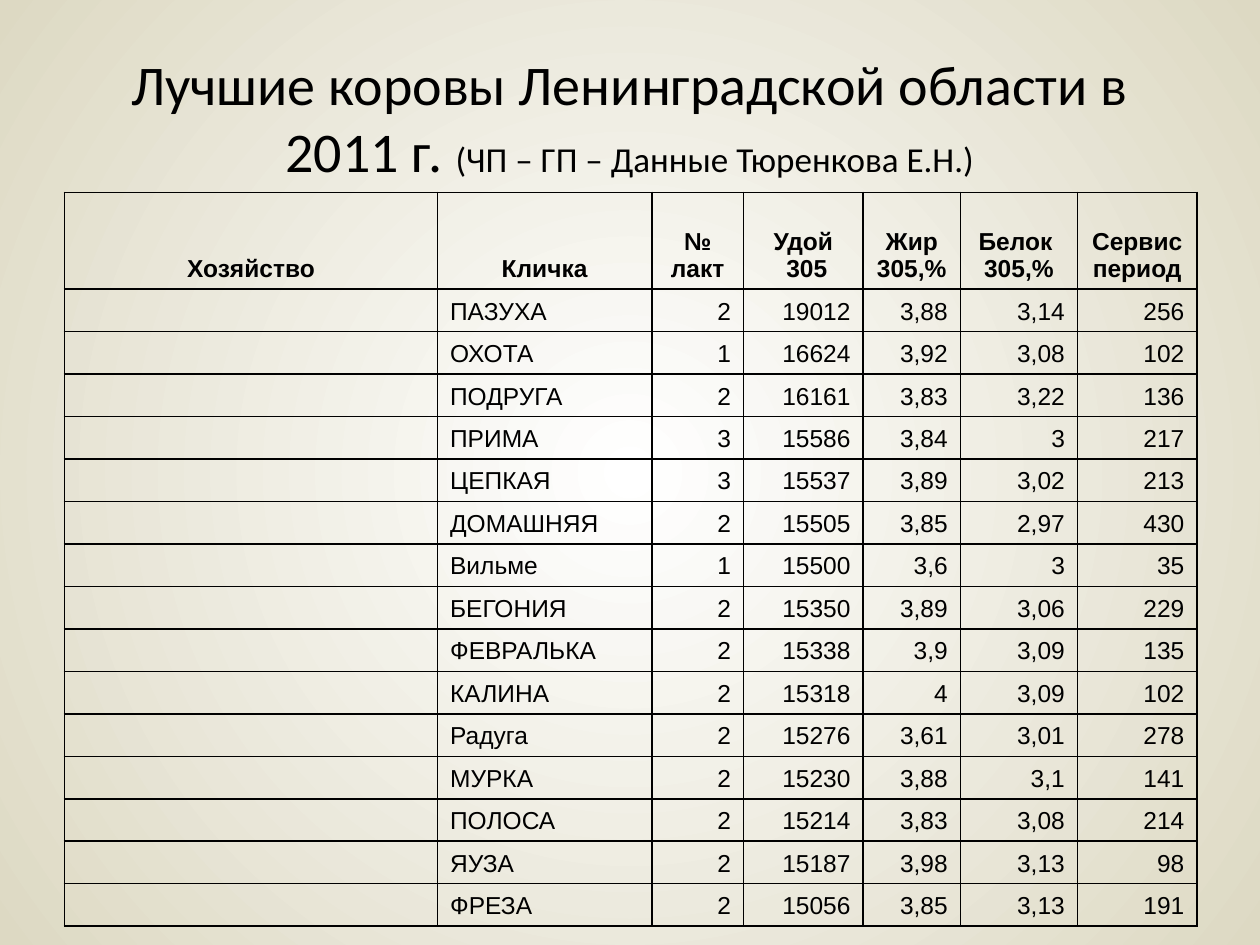
from dataclasses import dataclass

from lxml import etree
from pptx import Presentation
from pptx import util as u
from pptx.dml.color import RGBColor
from pptx.enum import text
from pptx.oxml import ns


@dataclass(frozen=True)
class Theme:
    ink: str = "000000"
    centre: str = "FFFFFF"
    edge: str = "DDD9C3"
    title_font: str = "Calibri"
    table_font: str = "Arial"
    title_size: int = 32
    source_size: int = 20
    table_size: int = 14
    border_width: int = 1


TITLE = "Лучшие коровы Ленинградской области в 2011 г. "
SOURCE = "(ЧП – ГП – Данные Тюренкова Е.Н.)"
HEADERS = ["Хозяйство", "Кличка", "№\nлакт", "Удой\n 305", "Жир\n305,%",
           "Белок \n305,%", "Сервис\nпериод"]
COWS = [
    ("ПАЗУХА", "2", "19012", "3,88", "3,14", "256"),
    ("ОХОТА", "1", "16624", "3,92", "3,08", "102"),
    ("ПОДРУГА", "2", "16161", "3,83", "3,22", "136"),
    ("ПРИМА", "3", "15586", "3,84", "3", "217"),
    ("ЦЕПКАЯ", "3", "15537", "3,89", "3,02", "213"),
    ("ДОМАШНЯЯ", "2", "15505", "3,85", "2,97", "430"),
    ("Вильме", "1", "15500", "3,6", "3", "35"),
    ("БЕГОНИЯ", "2", "15350", "3,89", "3,06", "229"),
    ("ФЕВРАЛЬКА", "2", "15338", "3,9", "3,09", "135"),
    ("КАЛИНА", "2", "15318", "4", "3,09", "102"),
    ("Радуга", "2", "15276", "3,61", "3,01", "278"),
    ("МУРКА", "2", "15230", "3,88", "3,1", "141"),
    ("ПОЛОСА", "2", "15214", "3,83", "3,08", "214"),
    ("ЯУЗА", "2", "15187", "3,98", "3,13", "98"),
    ("ФРЕЗА", "2", "15056", "3,85", "3,13", "191"),
]
COLUMN_WIDTHS = [7.52, 4.32, 1.85, 2.41, 1.96, 2.36, 2.41]
HEADER_HEIGHT = 1.95
ROW_HEIGHT = 0.81


class SlideBuilder:
    def __init__(self, slide, theme):
        self.slide = slide
        self.theme = theme

    def background(self):
        fill = self.slide.background.fill
        fill.gradient()
        for stop, color in zip(fill.gradient_stops, (self.theme.centre, self.theme.edge)):
            stop.color.rgb = RGBColor.from_string(color)
        gradient = self.slide.element.find(".//" + ns.qn("a:gradFill"))
        gradient.remove(gradient.find(ns.qn("a:lin")))
        circle = etree.SubElement(gradient, ns.qn("a:path"), path="circle")
        etree.SubElement(circle, ns.qn("a:fillToRect"),
                         {side: "50000" for side in "ltrb"})

    def run(self, paragraph, content, font_name, size, bold=False):
        run = paragraph.add_run()
        run.text = content
        run.font.name = font_name
        run.font.size = u.Pt(size)
        run.font.bold = bold
        run.font.color.rgb = RGBColor.from_string(self.theme.ink)

    def title(self, parts, left, top, width, height):
        shape = self.slide.shapes.title
        shape.left, shape.top = u.Cm(left), u.Cm(top)
        shape.width, shape.height = u.Cm(width), u.Cm(height)
        frame = shape.text_frame
        frame.word_wrap = True
        frame.vertical_anchor = text.MSO_ANCHOR.MIDDLE
        paragraph = frame.paragraphs[0]
        paragraph.alignment = text.PP_ALIGN.CENTER
        for content, size in parts:
            self.run(paragraph, content, self.theme.title_font, size)

    def borders(self, cell):
        properties = cell._tc.get_or_add_tcPr()
        for side in ("lnL", "lnR", "lnT", "lnB"):
            line = etree.SubElement(properties, ns.qn("a:" + side),
                                    w=str(u.Pt(self.theme.border_width)))
            fill = etree.SubElement(line, ns.qn("a:solidFill"))
            etree.SubElement(fill, ns.qn("a:srgbClr"), val=self.theme.ink)

    def cell(self, cell, content, alignment, bold):
        self.borders(cell)
        cell.fill.background()
        cell.vertical_anchor = text.MSO_ANCHOR.BOTTOM
        paragraph = cell.text_frame.paragraphs[0]
        paragraph.alignment = alignment
        if not content:
            etree.SubElement(paragraph._p, ns.qn("a:endParaRPr"),
                             sz=str(self.theme.table_size * 100))
            return
        for index, line in enumerate(content.split("\n")):
            if index:
                paragraph.add_line_break()
            self.run(paragraph, line, self.theme.table_font, self.theme.table_size, bold)

    def table(self, rows, left, top, widths, heights):
        table = self.slide.shapes.add_table(
            len(rows), len(widths), u.Cm(left), u.Cm(top),
            u.Cm(sum(widths)), u.Cm(sum(heights))).table
        table.first_row = table.horz_banding = False
        for column, width in zip(table.columns, widths):
            column.width = u.Cm(width)
        for row, height in zip(table.rows, heights):
            row.height = u.Cm(height)
        align = text.PP_ALIGN
        for row_index, row in enumerate(rows):
            header = row_index == 0
            for column_index, content in enumerate(row):
                body_align = align.LEFT if column_index < 2 else align.RIGHT
                self.cell(table.cell(row_index, column_index), content,
                          align.CENTER if header else body_align, header)


def main():
    presentation = Presentation()
    presentation.slide_width, presentation.slide_height = u.Cm(25.4), u.Cm(19.05)
    theme = Theme()
    slide = presentation.slides.add_slide(presentation.slide_layouts[5])
    builder = SlideBuilder(slide, theme)
    builder.background()
    builder.title([(TITLE, theme.title_size), (SOURCE, theme.source_size)],
                  1.27, 0.76, 22.86, 3.18)
    rows = [HEADERS] + [("", *cow) for cow in COWS]
    builder.table(rows, 1.3, 3.88, COLUMN_WIDTHS,
                  [HEADER_HEIGHT] + [ROW_HEIGHT] * len(COWS))
    presentation.save("out.pptx")


if __name__ == "__main__":
    main()
